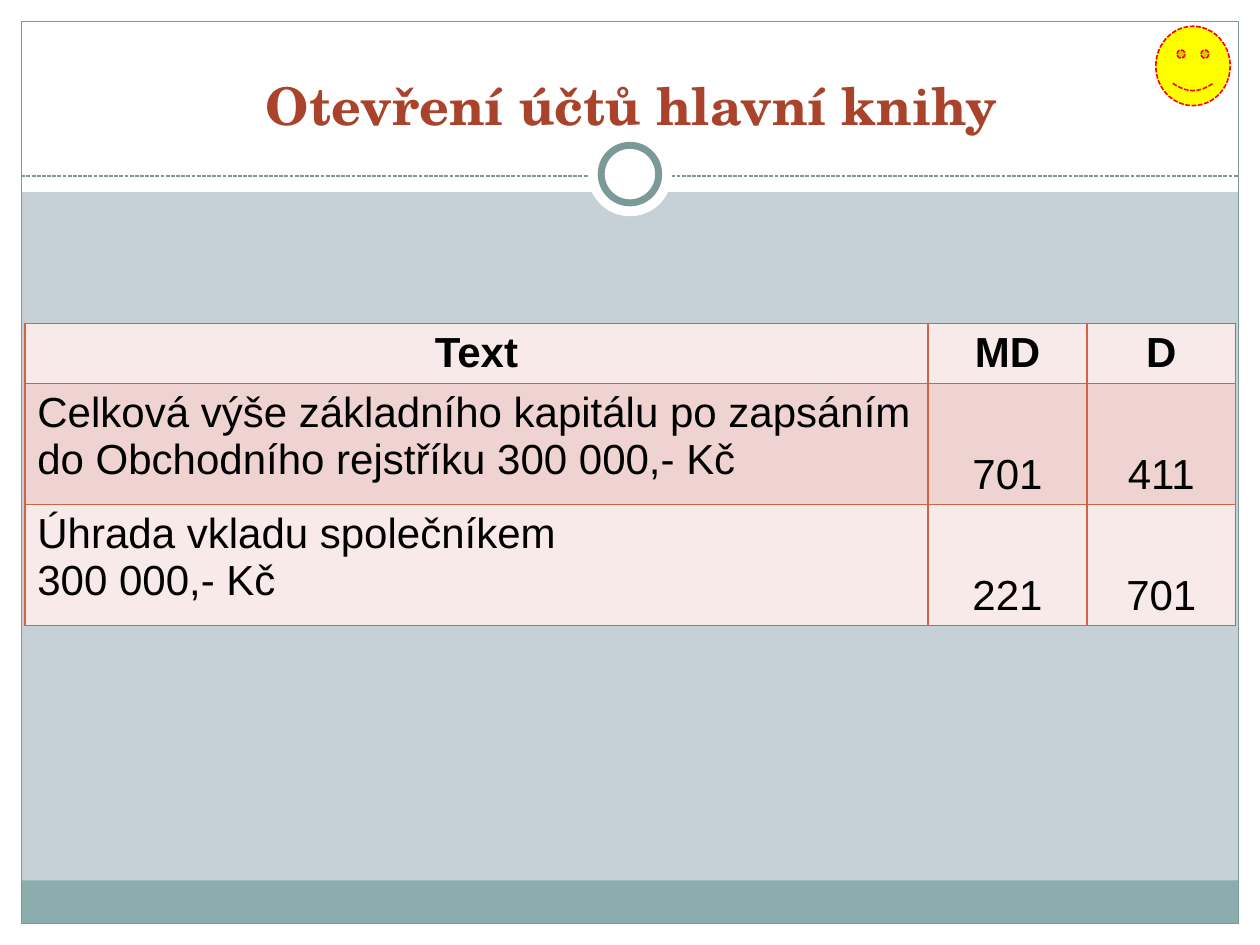
from typing import NamedTuple, Optional

from lxml import etree
from pptx import Presentation
from pptx.dml.color import RGBColor
from pptx.enum.dml import MSO_LINE
from pptx.enum.shapes import MSO_CONNECTOR, MSO_SHAPE
from pptx.enum.text import MSO_ANCHOR, PP_ALIGN
from pptx.oxml.ns import qn
from pptx.util import Cm, Pt

RECT, OVAL, SMILEY = MSO_SHAPE.RECTANGLE, MSO_SHAPE.OVAL, MSO_SHAPE.SMILEY_FACE
DASH = MSO_LINE.SQUARE_DOT
LEFT, CENTER = PP_ALIGN.LEFT, PP_ALIGN.CENTER
TOP, BOTTOM = MSO_ANCHOR.TOP, MSO_ANCHOR.BOTTOM

WHITE = RGBColor(0xFF, 0xFF, 0xFF)
BLACK = RGBColor(0x00, 0x00, 0x00)
BACKDROP = RGBColor(0xC5, 0xD1, 0xD7)
TEAL = RGBColor(0x8C, 0xAD, 0xAE)
SLATE = RGBColor(0x7C, 0x99, 0x9A)
RUST = RGBColor(0xA9, 0x43, 0x2B)
BORDER = RGBColor(0xD1, 0x63, 0x49)
PALE = RGBColor(0xF7, 0xEA, 0xE9)
ROSE = RGBColor(0xEE, 0xD3, 0xD0)
YELLOW = RGBColor(0xFF, 0xFF, 0x00)
RED = RGBColor(0xFF, 0x00, 0x00)

WIDTH, HEIGHT, EDGE = 25.4, 19.05, 0.43  # centimetres
RULE_Y = 3.55


class Figure(NamedTuple):
    kind: int
    x: float
    y: float
    w: float
    h: float
    fill: Optional[RGBColor] = None
    line: Optional[RGBColor] = None
    weight: float = 0.75
    dash: Optional[int] = None


class Row(NamedTuple):
    height: float
    fill: RGBColor
    text: list[str]
    debit: str
    credit: str
    header: bool = False


INNER = WIDTH - 2 * EDGE
MARGINS = [
    Figure(RECT, 0, HEIGHT - EDGE, WIDTH, EDGE, WHITE),
    Figure(RECT, 0, 0, WIDTH, 3.87, WHITE),
    Figure(RECT, 0, 0, EDGE, HEIGHT, WHITE),
    Figure(RECT, WIDTH - EDGE, 0, EDGE, HEIGHT, WHITE),
    Figure(RECT, EDGE, 17.75, INNER, 0.87, TEAL),
    Figure(RECT, EDGE, EDGE, INNER, HEIGHT - 2 * EDGE, line=SLATE),
]
RING = [
    Figure(OVAL, 11.85, 2.66, 1.7, 1.7, WHITE),
    Figure(OVAL, 12.12, 2.93, 1.16, 1.16, WHITE, SLATE, 4),
]
FACE = Figure(SMILEY, 23.3, 0.53, 1.5, 1.6, YELLOW, RED, 0.9, DASH)

COLUMNS = [18.21, 3.2, 3.0]
ROWS = [
    Row(1.21, PALE, ["Text"], "MD", "D", header=True),
    Row(2.44, ROSE, ["Celková výše základního kapitálu po zapsáním "
                     "do Obchodního rejstříku 300 000,- Kč"], "701", "411"),
    Row(2.44, PALE, ["Úhrada vkladu společníkem", "300 000,- Kč"], "221", "701"),
]


def draw_figure(s, f: Figure):
    sp = s.shapes.add_shape(f.kind, Cm(f.x), Cm(f.y), Cm(f.w), Cm(f.h))
    sp.shadow.inherit = False
    if f.fill is None:
        sp.fill.background()
    else:
        sp.fill.solid()
        sp.fill.fore_color.rgb = f.fill
    if f.line is None:
        sp.line.fill.background()
    else:
        sp.line.color.rgb = f.line
        sp.line.width = Pt(f.weight)
        if f.dash is not None:
            sp.line.dash_style = f.dash
    return sp


def draw_rule(s) -> None:
    ln = s.shapes.add_connector(MSO_CONNECTOR.STRAIGHT, Cm(EDGE), Cm(RULE_Y),
                                Cm(WIDTH - EDGE), Cm(RULE_Y))
    ln.line.color.rgb = SLATE
    ln.line.width = Pt(0.75)
    ln.line.dash_style = DASH
    etree.SubElement(ln._element.spPr, qn("a:effectLst"))


def add_run(p, text: str, font: str, size: float, color: RGBColor, bold: bool) -> None:
    r = p.add_run()
    r.text = text
    r.font.name = font
    r.font.size = Pt(size)
    r.font.color.rgb = color
    r.font.bold = bold


def place_title(s, text: str) -> None:
    title = s.shapes.title
    title.left, title.top, title.width, title.height = Cm(0.89), Cm(1.32), Cm(23.7), Cm(2.79)
    title._element.getparent().append(title._element)  # in front of the white band
    tf = title.text_frame
    tf.word_wrap = True
    tf.vertical_anchor = BOTTOM
    tf.margin_bottom = Cm(1.37)
    p = tf.paragraphs[0]
    p.alignment = CENTER
    add_run(p, text, "TeX Gyre Schola", 29.7, RUST, True)


def border_cell(cell) -> None:
    tc_pr = cell._tc.get_or_add_tcPr()
    for i, side in enumerate(("a:lnL", "a:lnR", "a:lnT", "a:lnB")):
        ln = etree.Element(qn(side), w=str(Pt(1)))
        fill = etree.SubElement(ln, qn("a:solidFill"))
        etree.SubElement(fill, qn("a:srgbClr"), val=str(BORDER))
        tc_pr.insert(i, ln)  # borders come before the cell fill


def fill_cell(cell, lines: list[str], row: Row, align: int, anchor: int) -> None:
    cell.fill.solid()
    cell.fill.fore_color.rgb = row.fill
    cell.vertical_anchor = anchor
    border_cell(cell)
    tf = cell.text_frame
    for i, line in enumerate(lines):
        p = tf.add_paragraph() if i else tf.paragraphs[0]
        p.alignment = align
        add_run(p, line, "Arial", 24, BLACK, row.header)


def draw_table(s) -> None:
    table = s.shapes.add_table(len(ROWS), len(COLUMNS), Cm(0.5), Cm(6.52), Cm(sum(COLUMNS)),
                               Cm(sum(row.height for row in ROWS))).table
    for column, width in zip(table.columns, COLUMNS):
        column.width = Cm(width)
    for i, row in enumerate(ROWS):
        table.rows[i].height = Cm(row.height)
        fill_cell(table.cell(i, 0), row.text, row, CENTER if row.header else LEFT, TOP)
        for j, amount in enumerate((row.debit, row.credit), start=1):
            fill_cell(table.cell(i, j), [amount], row, CENTER, TOP if row.header else BOTTOM)


def main() -> None:
    prs = Presentation()
    prs.slide_width, prs.slide_height = Cm(WIDTH), Cm(HEIGHT)
    s = prs.slides.add_slide(prs.slide_layouts[5])
    s.background.fill.solid()
    s.background.fill.fore_color.rgb = BACKDROP

    # Frame, dashed rule and ring
    for f in MARGINS:
        draw_figure(s, f)
    draw_rule(s)
    for f in RING:
        draw_figure(s, f)

    # Content
    place_title(s, "Otevření účtů hlavní knihy")
    draw_table(s)
    draw_figure(s, FACE).adjustments[0] = 0.047

    prs.save("out.pptx")


if __name__ == "__main__":
    main()
